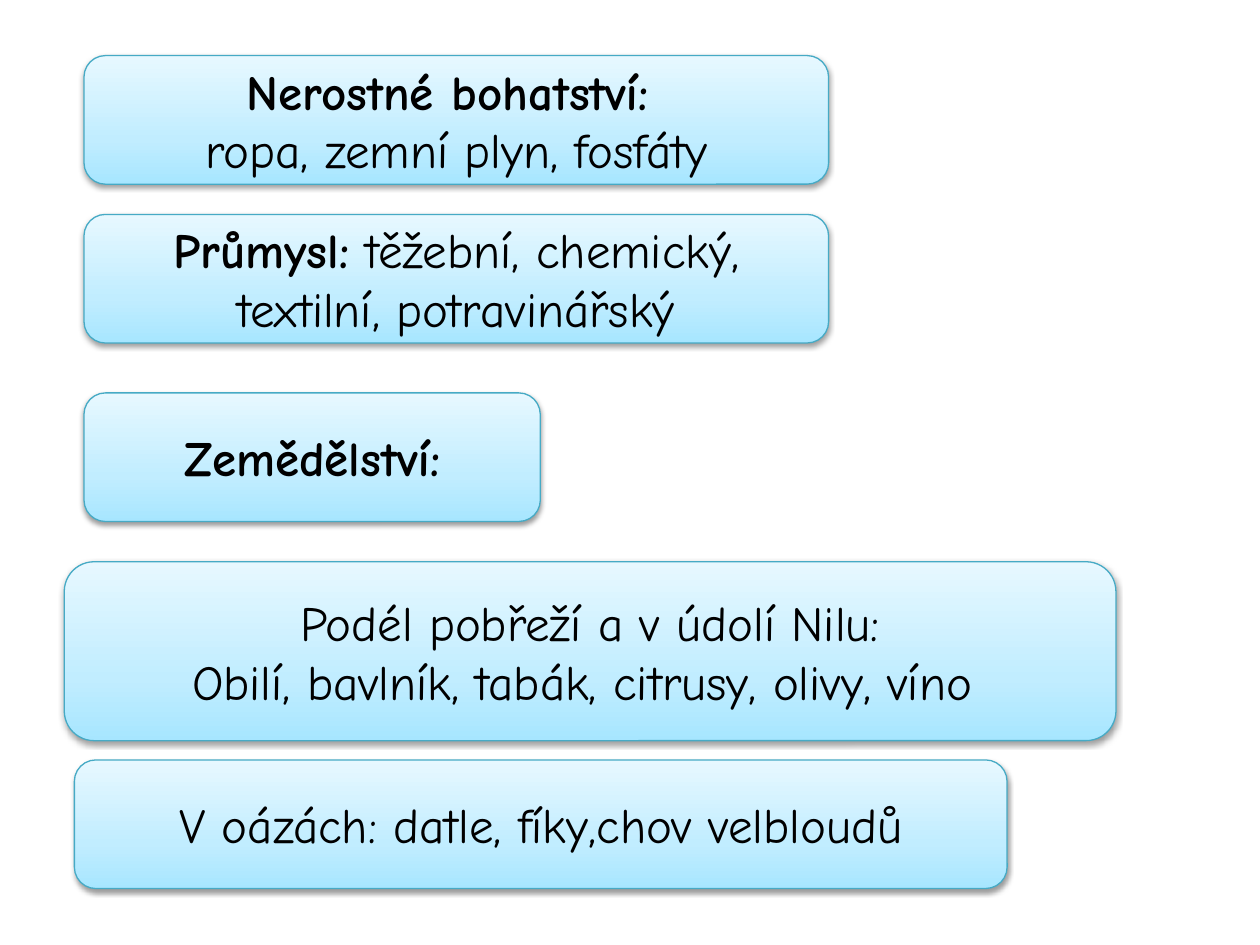
from copy import deepcopy

from lxml import etree
from pptx import Presentation
from pptx.dml.color import RGBColor
from pptx.enum.shapes import MSO_SHAPE
from pptx.enum.text import MSO_ANCHOR, PP_ALIGN
from pptx.oxml.ns import qn
from pptx.util import Pt

ROUNDED = MSO_SHAPE.ROUNDED_RECTANGLE
MIDDLE = MSO_ANCHOR.MIDDLE
CENTER = PP_ALIGN.CENTER
BLANK_LAYOUT = 6

# Content: (left, top, width, height) in points, then paragraphs of (text, bold) runs
CARDS = [
    ((48, 31.75, 425.5, 73.5), [
        [("Nerostné bohatství: ", True)],
        [("ropa, zemní plyn, fosfáty", False)],
    ]),
    ((48, 122.5, 425.5, 73.5), [
        [("Průmysl:", True), (" těžební, chemický, textilní, potravinářský", False)],
    ]),
    ((48, 224.5, 260.75, 73.5), [
        [("Zemědělství:", True)],
    ]),
    ((36.75, 321, 601, 102.25), [
        [("Podél pobřeží a v údolí Nilu:", False)],
        [("Obilí, bavlník, tabák, citrusy, olivy, víno ", False)],
    ]),
    ((42.5, 434.25, 533, 73.5), [
        [("V oázách: datle, fíky,chov velbloudů", False)],
    ]),
]

THEME = {
    "font": "Comic Neue",
    "size": Pt(28),
    "text": RGBColor.from_string("000000"),
    "line": RGBColor.from_string("46AAC5"),
    "line_width": Pt(0.75),
    "gradient": [(0, "A7E6FF"), (0.35, "C1EDFF"), (1, "E7F8FF")],
    "shadow": {"color": "000000", "alpha": 38, "blur": Pt(3.1), "distance": Pt(1.6), "angle": 90},
}


def fill_gradient(card):
    """Blend the theme colours from the bottom edge to the top."""
    card.fill.gradient()
    card.fill.gradient_angle = 90
    stop_list = card._element.spPr.find(".//" + qn("a:gsLst"))
    stop_list.append(deepcopy(stop_list[-1]))
    for stop, (position, color) in zip(card.fill.gradient_stops, THEME["gradient"]):
        stop.position = position
        stop.color.rgb = RGBColor.from_string(color)


def cast_shadow(card):
    """Replace the inherited shadow with a soft one below the card."""
    look = THEME["shadow"]
    card.shadow.inherit = False
    effects = card._element.spPr.find(qn("a:effectLst"))
    shadow = etree.SubElement(
        effects, qn("a:outerShdw"), blurRad=str(look["blur"]), dist=str(look["distance"]),
        dir=str(look["angle"] * 60000), rotWithShape="0")
    color = etree.SubElement(shadow, qn("a:srgbClr"), val=look["color"])
    etree.SubElement(color, qn("a:alpha"), val=str(look["alpha"] * 1000))


def write_text(frame, paragraphs):
    frame.word_wrap = True
    frame.vertical_anchor = MIDDLE
    for index, runs in enumerate(paragraphs):
        paragraph = frame.add_paragraph() if index else frame.paragraphs[0]
        paragraph.alignment = CENTER
        paragraph.font.name = THEME["font"]
        paragraph.font.size = THEME["size"]
        paragraph.font.color.rgb = THEME["text"]
        for text, bold in runs:
            run = paragraph.add_run()
            run.text = text
            run.font.bold = bold


def add_card(slide, box, paragraphs):
    card = slide.shapes.add_shape(ROUNDED, *map(Pt, box))
    fill_gradient(card)
    card.line.color.rgb = THEME["line"]
    card.line.width = THEME["line_width"]
    cast_shadow(card)
    write_text(card.text_frame, paragraphs)


def main():
    deck = Presentation()
    deck.slide_width, deck.slide_height = Pt(720), Pt(540)
    slide = deck.slides.add_slide(deck.slide_layouts[BLANK_LAYOUT])
    for box, paragraphs in CARDS:
        add_card(slide, box, paragraphs)
    deck.save("out.pptx")


if __name__ == "__main__":
    main()
